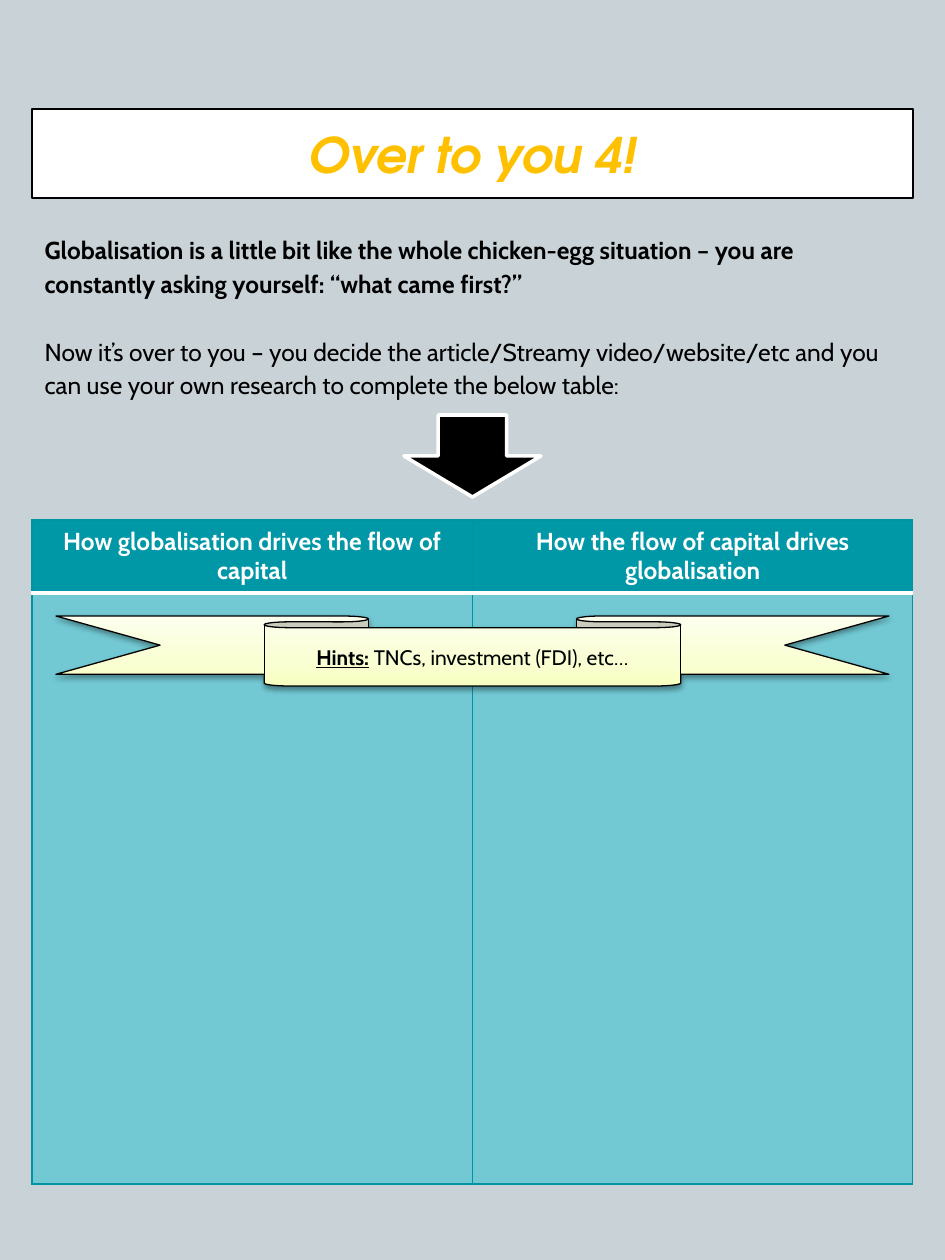
from lxml.etree import SubElement
from pptx import Presentation
from pptx.dml.color import RGBColor
from pptx.enum.shapes import MSO_SHAPE
from pptx.enum.text import MSO_ANCHOR, MSO_AUTO_SIZE, PP_ALIGN
from pptx.oxml import parse_xml
from pptx.oxml.ns import nsdecls, qn
from pptx.util import Pt

SCALE = 914400 / 126
HUES = {
    "back": "C9D3D7", "white": "FFFFFF", "black": "000000", "gold": "FFC000",
    "head": "0097A7", "cell": "72C9D4", "edge": "0094A3",
}
FADE = ((0, "F7FFC0"), (35, "F9FFD3"), (100, "FDFFEE"))
TITLE = {"name": "TeX Gyre Adventor", "size": Pt(28), "bold": True, "italic": True}
STRONG = {"name": "Cabin", "size": Pt(14), "bold": True}
PLAIN = {**STRONG, "bold": False}
HINT = {**STRONG, "size": Pt(12), "underline": True}
NOTE = {**HINT, "bold": False, "underline": False}


def px(count):
    """Turn px into EMU."""
    return round(count * SCALE)


def hue(name):
    """Look up a colour."""
    return RGBColor.from_string(HUES[name])


def place(shape, box):
    """Move a shape to a px box."""
    for key, size in zip(("left", "top", "width", "height"), box):
        setattr(shape, key, px(size))


def paint(shape, fill, line, width):
    """Give a shape a solid fill and an outline."""
    shape.fill.solid()
    shape.fill.fore_color.rgb = hue(fill)
    shape.line.color.rgb = hue(line)
    shape.line.width = Pt(width)


def write(para, text, style, tint):
    """Add a formatted run."""
    run = para.add_run()
    run.text = text
    for key, value in style.items():
        setattr(run.font, key, value)
    run.font.color.rgb = hue(tint)


def frame(shape, anchor):
    """Set wrapping, anchor and insets of a text frame."""
    text = shape.text_frame
    inset = Pt(7.2)
    looks = {
        "word_wrap": True, "auto_size": MSO_AUTO_SIZE.NONE, "vertical_anchor": anchor,
        "margin_left": inset, "margin_right": inset,
        "margin_top": inset, "margin_bottom": inset,
    }
    for key, value in looks.items():
        setattr(text, key, value)
    return text


def banner(slide, box):
    """Fill the title bar."""
    title = slide.shapes.title
    place(title, box)
    paint(title, "white", "black", 0.75)
    para = frame(title, MSO_ANCHOR.MIDDLE).paragraphs[0]
    para.alignment = PP_ALIGN.CENTER
    write(para, "Over to you 4!", TITLE, "gold")


def intro(slide, box):
    """Fill the body with the two paragraphs of the task."""
    body = slide.placeholders[1]
    place(body, box)
    text = frame(body, MSO_ANCHOR.TOP)
    parts = (
        ("Globalisation is a little bit like the whole chicken-egg situation – you are "
         "constantly asking yourself: “what came first?”", STRONG, 0),
        ("Now it’s over to you – you decide the article/Streamy video/website/etc and you "
         "can use your own research to complete the below table:", PLAIN, 19.5),
    )
    for index, (words, style, gap) in enumerate(parts):
        para = text.add_paragraph() if index else text.paragraphs[0]
        props = para._p.get_or_add_pPr()
        props.set("marL", "0")
        props.set("indent", "0")
        SubElement(props, qn("a:buNone"))
        para.line_spacing = 1.15
        para.space_before = Pt(gap)
        write(para, words, style, "black")


def arrow(slide, box):
    """Draw the arrow that points to the table."""
    shape = slide.shapes.add_shape(MSO_SHAPE.DOWN_ARROW, *map(px, box))
    shape.shadow.inherit = False
    paint(shape, "black", "white", 2)


def border(cell, sides):
    """Put border lines ahead of the fill of a cell."""
    props = cell._tc.get_or_add_tcPr()
    for index, (side, (tint, width)) in enumerate(sides.items()):
        props.insert(index, parse_xml(
            f'<a:ln{side} {nsdecls("a")} w="{Pt(width)}"><a:solidFill>'
            f'<a:srgbClr val="{HUES[tint]}"/></a:solidFill></a:ln{side}>'))


def grid(slide, box):
    """Build the two-column answer table."""
    table = slide.shapes.add_table(2, 2, *map(px, box)).table
    table.first_row = table.horz_banding = False
    heads = ("How globalisation drives the flow of capital",
             "How the flow of capital drives globalisation")
    for row, tall in zip(table.rows, (73, box[3] - 73)):
        row.height = px(tall)
    thin, thick = ("edge", 0.75), ("white", 2)
    for col, words in enumerate(heads):
        for row, fill in enumerate(("head", "cell")):
            cell = table.cell(row, col)
            cell.fill.solid()
            cell.fill.fore_color.rgb = hue(fill)
            border(cell, {"L": thin, "R": thin, "T": thick if row else thin,
                          "B": thin if row else thick})
        para = table.cell(0, col).text_frame.paragraphs[0]
        para.alignment = PP_ALIGN.CENTER
        write(para, words, STRONG, "white")


def ribbon(slide, box):
    """Draw the shaded ribbon with the hints."""
    shape = slide.shapes.add_shape(MSO_SHAPE.DOWN_RIBBON, *map(px, box))
    paint(shape, "white", "black", 0.75)
    stops = "".join(f'<a:gs pos="{pos * 1000}"><a:srgbClr val="{tint}"/></a:gs>'
                    for pos, tint in FADE)
    props = shape._element.spPr
    props.replace(props.find(qn("a:solidFill")), parse_xml(
        f'<a:gradFill {nsdecls("a")} rotWithShape="1"><a:gsLst>{stops}</a:gsLst>'
        '<a:lin ang="16200000" scaled="0"/></a:gradFill>'))
    shape.shadow.inherit = False
    props.find(qn("a:effectLst")).append(parse_xml(
        f'<a:outerShdw {nsdecls("a")} blurRad="{Pt(3.1)}" dist="{Pt(1.6)}" dir="5400000" '
        f'rotWithShape="0"><a:srgbClr val="{HUES["black"]}"><a:alpha val="38000"/>'
        '</a:srgbClr></a:outerShdw>'))
    para = frame(shape, MSO_ANCHOR.MIDDLE).paragraphs[0]
    para.alignment = PP_ALIGN.CENTER
    write(para, "Hints:", HINT, "black")
    write(para, " TNCs, investment (FDI), etc…", NOTE, "black")


def main():
    """Build and save the slide."""
    deck = Presentation()
    deck.slide_width, deck.slide_height = px(945), px(1260)
    slide = deck.slides.add_slide(deck.slide_layouts[1])
    slide.background.fill.solid()
    slide.background.fill.fore_color.rgb = hue("back")
    intro(slide, (32, 218, 881, 837))
    banner(slide, (32, 109, 881, 89))
    arrow(slide, (404, 415, 137, 82))
    grid(slide, (32, 520, 881, 664))
    ribbon(slide, (56, 616, 833, 70))
    deck.save("out.pptx")


if __name__ == "__main__":
    main()
